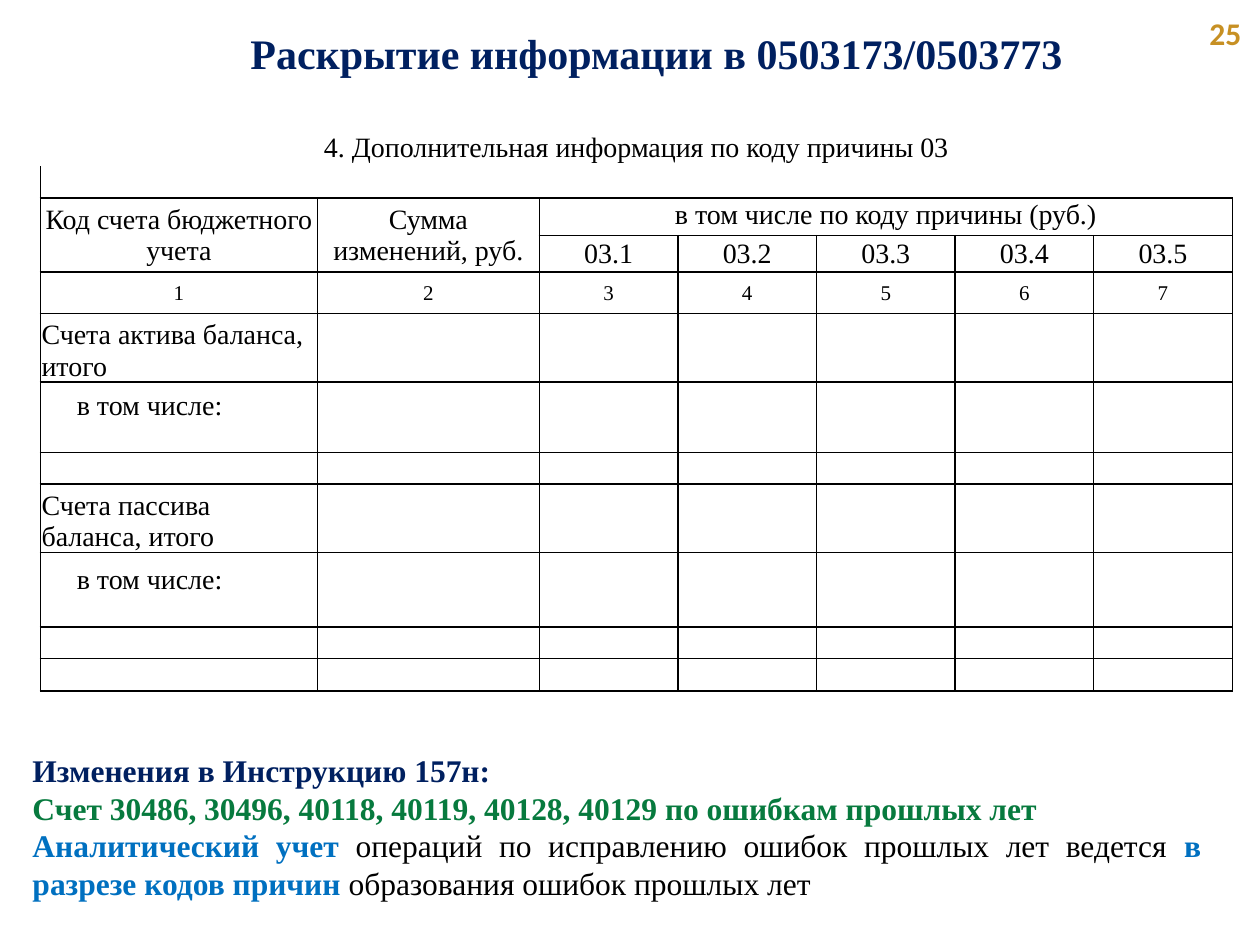
from lxml.etree import SubElement
from pptx import Presentation
from pptx.dml.color import RGBColor
from pptx.enum.text import MSO_ANCHOR, PP_ALIGN
from pptx.oxml.ns import qn
from pptx.util import Inches, Pt


def paint(code):
    return RGBColor.from_string(code)


def write(para, text, size=16, color="000000", bold=False,
          align=PP_ALIGN.LEFT, font="Times New Roman"):
    para.alignment = align
    run = para.add_run()
    run.text = text
    run.font.size = Pt(size)
    run.font.name = font
    run.font.bold = bold
    run.font.color.rgb = paint(color)


deck = Presentation()
deck.slide_width, deck.slide_height = Inches(10), Inches(7.5)
slide = deck.slides.add_slide(deck.slide_layouts[5])

title = slide.shapes.title
title.left, title.top = Inches(0.91), Inches(0.17)
title.width, title.height = Inches(8.6), Inches(0.5)
title.text_frame.vertical_anchor = MSO_ANCHOR.MIDDLE
write(title.text_frame.paragraphs[0], "Раскрытие информации в 0503173/0503773",
      size=24, color="002060", bold=True, align=PP_ALIGN.CENTER)

number = slide.shapes.add_textbox(Inches(9.5), Inches(0.06), Inches(0.5), Inches(0.4))
number.text_frame.word_wrap = True
write(number.text_frame.paragraphs[0], "25", size=18, color="C79023",
      bold=True, font="Calibri")

widths = [2.2, 1.76] + [1.1] * 5
heights = [0.3, 0.25, 0.3, 0.29, 0.33, 0.5, 0.31, 0.25, 0.25, 0.51, 0.34, 0.25, 0.25, 0.26]
last = len(widths) - 1
frame = slide.shapes.add_table(len(heights), len(widths), Inches(0.32), Inches(1.02),
                               Inches(sum(widths)), Inches(sum(heights)))
table = frame.table
table.first_row = table.horz_banding = False
for column, width in zip(table.columns, widths):
    column.width = Inches(width)
for row, height in zip(table.rows, heights):
    row.height = Inches(height)

spans = [(0, 0, 0, last), (1, 0, 1, last), (2, 0, 3, 0), (2, 1, 3, 1), (2, 2, 2, last)]
spans += [(top, col, top + 1, col) for top in (6, 10) for col in range(1, last + 1)]
for top, left, bottom, right in spans:
    table.cell(top, left).merge(table.cell(bottom, right))

labels = {
    (0, 0): "4. Дополнительная информация по коду причины 03",
    (2, 0): "Код счета бюджетного учета",
    (2, 1): "Сумма изменений, руб.",
    (2, 2): "в том числе по коду причины (руб.)",
    (5, 0): "Счета актива баланса, итого",
    (6, 0): "в том числе:",
    (9, 0): "Счета пассива баланса, итого",
    (10, 0): "в том числе:",
}
labels.update({(3, col): f"03.{col - 1}" for col in range(2, last + 1)})
labels.update({(4, col): str(col + 1) for col in range(last + 1)})

for r in range(len(heights)):
    for c in range(len(widths)):
        cell = table.cell(r, c)
        cell.margin_left = cell.margin_right = cell.margin_top = Inches(0.01)
        cell.margin_bottom = 0
        head = r < 5
        cell.vertical_anchor = MSO_ANCHOR.MIDDLE if head else MSO_ANCHOR.BOTTOM
        if (r, c) == (2, 2):
            cell.vertical_anchor = MSO_ANCHOR.TOP

        edges = {
            "L": r > 1 or (r == 1 and c == 0),
            "R": r > 1 or (r == 1 and c == last),
            "T": r > 1 and not (r in (7, 11) and c == 0),
            "B": r > 0 and not (r in (6, 10) and c == 0),
        }
        props = cell._tc.get_or_add_tcPr()
        for side, drawn in edges.items():
            line = SubElement(props, qn(f"a:ln{side}"), w=str(Pt(1)))
            if drawn:
                fill = SubElement(line, qn("a:solidFill"))
                SubElement(fill, qn("a:srgbClr"), val="000000")
            else:
                SubElement(line, qn("a:noFill"))
        cell.fill.background()

        para = cell.text_frame.paragraphs[0]
        if (r, c) in labels:
            write(para, labels[r, c], size=12 if r == 4 else 16,
                  align=PP_ALIGN.CENTER if head else PP_ALIGN.LEFT)
            if r in (6, 10):
                para._p.get_or_add_pPr().set("marL", str(Inches(0.28)))
        else:
            SubElement(para._p, qn("a:endParaRPr"), sz="1200")

notes = [
    [("Изменения в Инструкцию 157н:", "002060", True)],
    [("Счет 30486, 30496, 40118, 40119, 40128, 40129 по ошибкам прошлых лет", "077A3E", True)],
    [("Аналитический учет ", "0070C0", True),
     ("операций по исправлению ошибок прошлых лет ведется ", "000000", False),
     ("в разрезе кодов причин", "0070C0", True),
     (" образования ошибок прошлых лет", "000000", False)],
]
box = slide.shapes.add_textbox(Inches(0.16), Inches(5.91), Inches(9.47), Inches(1.31))
body = box.text_frame
body.word_wrap = True
for i, parts in enumerate(notes):
    para = body.add_paragraph() if i else body.paragraphs[0]
    for text, color, bold in parts:
        write(para, text, size=18, color=color, bold=bold, align=PP_ALIGN.JUSTIFY)

deck.save("out.pptx")
